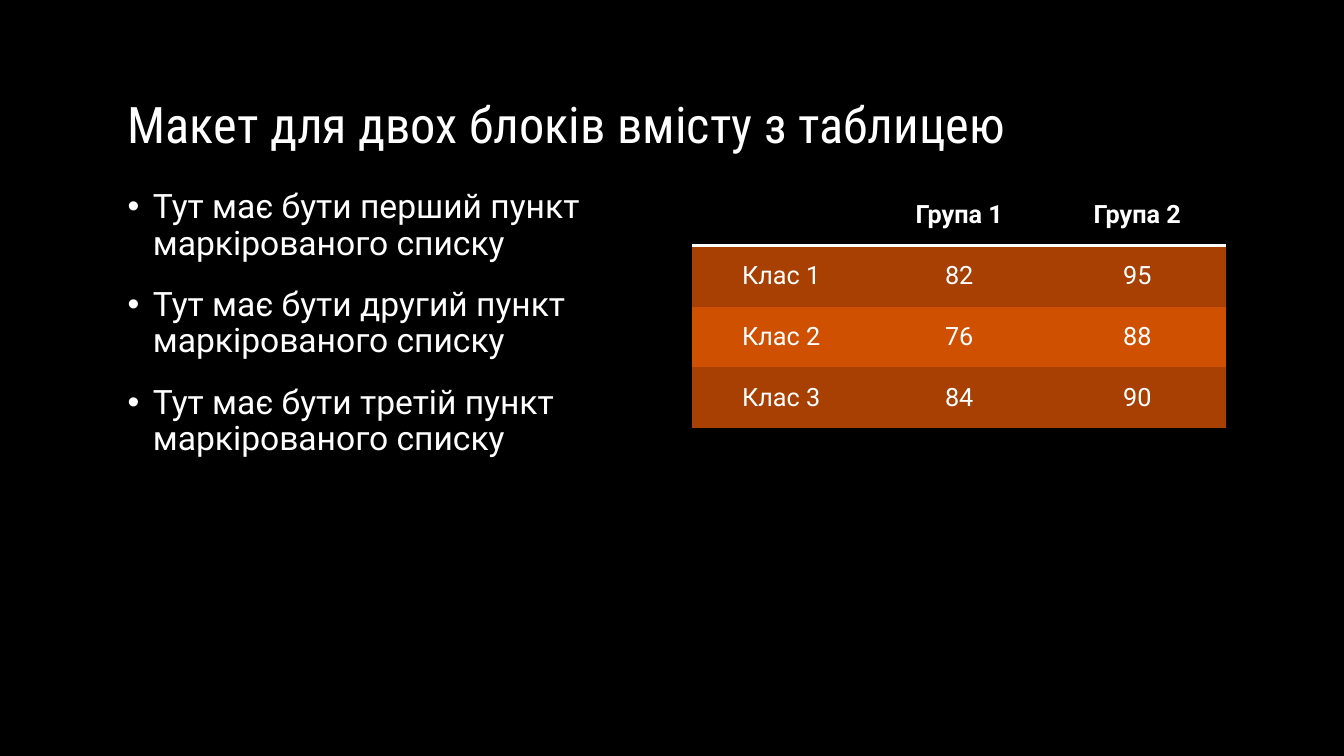
from dataclasses import dataclass

import lxml.etree
import pptx
import pptx.dml.color
import pptx.enum.text
import pptx.oxml
import pptx.oxml.ns
import pptx.shapes.base
import pptx.slide
import pptx.table
import pptx.text.text
import pptx.util

BLACK = pptx.dml.color.RGBColor(0x00, 0x00, 0x00)
WHITE = pptx.dml.color.RGBColor(0xFF, 0xFF, 0xFF)
DARK_ORANGE = pptx.dml.color.RGBColor(0xA7, 0x40, 0x02)
ORANGE = pptx.dml.color.RGBColor(0xD0, 0x50, 0x02)

SLIDE_WIDTH = pptx.util.Inches(13.33)
SLIDE_HEIGHT = pptx.util.Inches(7.5)
GRID_COLUMNS, GRID_ROWS = 160, 90
PLAIN_TABLE_STYLE = "{2D5ABB26-0587-4C30-8999-92F81FD0307C}"

TITLE = "Макет для двох блоків вмісту з таблицею"
BULLETS = [
    "Тут має бути перший пункт маркірованого списку",
    "Тут має бути другий пункт маркірованого списку",
    "Тут має бути третій пункт маркірованого списку",
]


@dataclass(frozen=True)
class Area:
    """A rectangle in grid columns and rows."""
    column: float
    row: float
    columns: float
    rows: float

    def lengths(self) -> tuple[int, int, int, int]:
        return (
            round(SLIDE_WIDTH * self.column / GRID_COLUMNS),
            round(SLIDE_HEIGHT * self.row / GRID_ROWS),
            round(SLIDE_WIDTH * self.columns / GRID_COLUMNS),
            round(SLIDE_HEIGHT * self.rows / GRID_ROWS),
        )


@dataclass(frozen=True)
class TableRow:
    values: tuple[str, ...]
    fill: pptx.dml.color.RGBColor
    is_header: bool = False


TITLE_AREA = Area(14, 4, 132, 15)
LIST_AREA = Area(14, 22, 63.6, 57)
TABLE_AREA = Area(82.4, 22, 63.6, 29)

TABLE_ROWS = [
    TableRow(("", "Група 1", "Група 2"), BLACK, is_header=True),
    TableRow(("Клас 1", "82", "95"), DARK_ORANGE),
    TableRow(("Клас 2", "76", "88"), ORANGE),
    TableRow(("Клас 3", "84", "90"), DARK_ORANGE),
]


def format_font(paragraph: pptx.text.text._Paragraph, name: str, size: int,
                bold: bool = False) -> None:
    font = paragraph.font
    font.name = name
    font.size = pptx.util.Pt(size)
    font.bold = bold
    font.color.rgb = WHITE


def place(shape: pptx.shapes.base.BaseShape, area: Area) -> None:
    shape.left, shape.top, shape.width, shape.height = area.lengths()


def add_bullet(paragraph: pptx.text.text._Paragraph) -> None:
    properties = paragraph._p.get_or_add_pPr()
    indent = pptx.util.Inches(0.25)
    properties.set("marL", str(indent))
    properties.set("indent", str(-indent))
    for tag, attribute, value in (("a:buFont", "typeface", "Arial"),
                                  ("a:buChar", "char", "•")):
        element = lxml.etree.SubElement(properties, pptx.oxml.ns.qn(tag))
        element.set(attribute, value)


def fill_title(slide: pptx.slide.Slide) -> None:
    title = slide.shapes.title
    place(title, TITLE_AREA)
    frame = title.text_frame
    frame.text = TITLE
    frame.auto_size = pptx.enum.text.MSO_AUTO_SIZE.NONE
    frame.vertical_anchor = pptx.enum.text.MSO_ANCHOR.BOTTOM
    paragraph = frame.paragraphs[0]
    paragraph.alignment = pptx.enum.text.PP_ALIGN.LEFT
    paragraph.line_spacing = 0.9
    format_font(paragraph, "Roboto Condensed", 36)


def fill_list(slide: pptx.slide.Slide) -> None:
    body = slide.placeholders[1]
    place(body, LIST_AREA)
    frame = body.text_frame
    frame.text = "\n".join(BULLETS)
    frame.auto_size = pptx.enum.text.MSO_AUTO_SIZE.NONE
    for index, paragraph in enumerate(frame.paragraphs):
        add_bullet(paragraph)
        paragraph.line_spacing = 0.9
        paragraph.space_before = pptx.util.Pt(18 if index else 0)
        format_font(paragraph, "Roboto", 24)


def add_bottom_border(cell: pptx.table._Cell) -> None:
    border = pptx.oxml.parse_xml(
        f'<a:lnB {pptx.oxml.ns.nsdecls("a")} w="{pptx.util.Pt(2)}">'
        f'<a:solidFill><a:srgbClr val="{WHITE}"/></a:solidFill></a:lnB>')
    cell._tc.get_or_add_tcPr().insert(0, border)


def format_cell(cell: pptx.table._Cell, text: str, row: TableRow) -> None:
    cell.text = text
    cell.vertical_anchor = pptx.enum.text.MSO_ANCHOR.MIDDLE
    cell.fill.solid()
    cell.fill.fore_color.rgb = row.fill
    paragraph = cell.text_frame.paragraphs[0]
    paragraph.alignment = pptx.enum.text.PP_ALIGN.CENTER
    format_font(paragraph, "Roboto", 18, row.is_header)
    if row.is_header:
        add_bottom_border(cell)


def add_scores_table(slide: pptx.slide.Slide) -> None:
    column_count = len(TABLE_ROWS[0].values)
    frame = slide.shapes.add_table(len(TABLE_ROWS), column_count, *TABLE_AREA.lengths())
    table = frame.table
    table.horz_banding = False
    style = table._tbl.tblPr.find(pptx.oxml.ns.qn("a:tableStyleId"))
    style.text = PLAIN_TABLE_STYLE
    for row_index, row in enumerate(TABLE_ROWS):
        for column_index, text in enumerate(row.values):
            format_cell(table.cell(row_index, column_index), text, row)


def main() -> None:
    presentation = pptx.Presentation()
    presentation.slide_width = SLIDE_WIDTH
    presentation.slide_height = SLIDE_HEIGHT
    slide = presentation.slides.add_slide(presentation.slide_layouts[1])
    slide.background.fill.solid()
    slide.background.fill.fore_color.rgb = BLACK
    fill_title(slide)
    fill_list(slide)
    add_scores_table(slide)
    presentation.save("out.pptx")


if __name__ == "__main__":
    main()
